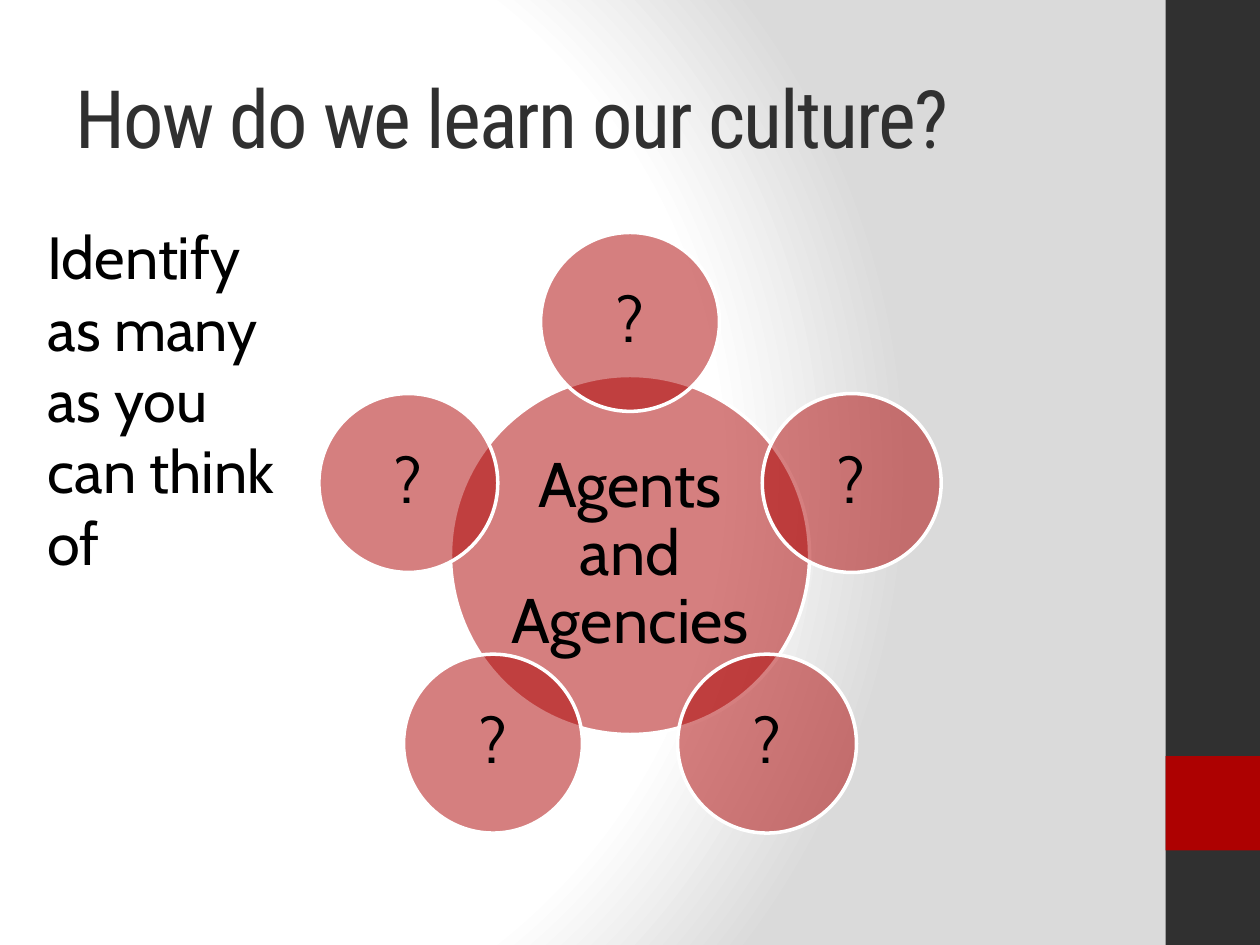
import math
import pptx
import pptx.util
import pptx.dml.color
import pptx.enum.shapes
import pptx.enum.text
import pptx.oxml
import pptx.oxml.ns
import lxml.etree

THEME = {
    "dark": "303030", "accent": "AD0101", "paper": "FFFFFF", "shade": "DADADA", "ink": "000000",
    "head": "Roboto Condensed", "body": "Cabin",
    "title_size": 46, "prompt_size": 34, "circle_size": 36, "outline": 2,
}

qn = pptx.oxml.ns.qn
rgb = pptx.dml.color.RGBColor.from_string
SHAPE = pptx.enum.shapes.MSO_SHAPE
ALIGN = pptx.enum.text.PP_ALIGN
ANCHOR = pptx.enum.text.MSO_ANCHOR

prs = pptx.Presentation()
prs.slide_width = pptx.util.Inches(10)
prs.slide_height = pptx.util.Inches(7.5)
U = prs.slide_width // 100
s = prs.slides.add_slide(prs.slide_layouts[6])


def add_shape(kind, x, y, w, h, color):
    sp = s.shapes.add_shape(kind, *(int(v * U) for v in (x, y, w, h)))
    sp.shadow.inherit = False
    sp.fill.solid()
    sp.fill.fore_color.rgb = rgb(color)
    sp.line.fill.background()
    return sp


def write(sp, text, frame, para, font, color):
    tf = sp.text_frame
    p = tf.paragraphs[0]
    r = p.add_run()
    r.text = text
    for obj, values in ((tf, {"word_wrap": True, **frame}), (p, para), (r.font, font)):
        for name, value in values.items():
            setattr(obj, name, value)
    r.font.color.rgb = rgb(color)
    return r


s.background.fill.gradient()
grad = s.element.find(".//" + qn("a:gradFill"))
for child in list(grad):
    grad.remove(child)
stops = lxml.etree.SubElement(grad, qn("a:gsLst"))
for pos, color in ((0, "paper"), (75, "paper"), (100, "shade")):
    stop = lxml.etree.SubElement(stops, qn("a:gs"), pos=str(pos * 1000))
    lxml.etree.SubElement(stop, qn("a:srgbClr"), val=THEME[color])
focus = lxml.etree.SubElement(grad, qn("a:path"), path="circle")
lxml.etree.SubElement(focus, qn("a:fillToRect"), l="20000", t="50000", r="100000", b="50000")

add_shape(SHAPE.RECTANGLE, 92.5, 0, 7.5, 75, THEME["dark"])
add_shape(SHAPE.RECTANGLE, 92.5, 60, 7.5, 7.5, THEME["accent"])

title = s.shapes.add_textbox(*(int(v * U) for v in (5, 3, 83.3, 12.5)))
r = write(title, "How do we learn our culture?", {"vertical_anchor": ANCHOR.MIDDLE}, {},
          {"size": pptx.util.Pt(THEME["title_size"]), "name": THEME["head"]}, THEME["dark"])
r.font._element.set("spc", "-100")

hub_x, hub_y, orbit = 50, 44.05, 18.5
circles = [("Agents and Agencies", hub_x, hub_y, 28.5)]
for i in range(5):
    angle = math.radians(72 * i)
    circles.append(("?", hub_x + orbit * math.sin(angle), hub_y - orbit * math.cos(angle), 14.2))

inset = pptx.util.Inches(0.05)
circle_frame = {"vertical_anchor": ANCHOR.MIDDLE, "margin_left": inset, "margin_right": inset,
                "margin_top": inset, "margin_bottom": inset}
circle_para = {"alignment": ALIGN.CENTER, "line_spacing": 0.9}
circle_font = {"size": pptx.util.Pt(THEME["circle_size"]), "name": THEME["body"]}
for text, x, y, d in circles:
    sp = add_shape(SHAPE.OVAL, x - d / 2, y - d / 2, d, d, THEME["accent"])
    fill_color = sp.element.spPr.find(qn("a:solidFill"))[0]
    lxml.etree.SubElement(fill_color, qn("a:alpha"), val="50000")
    sp.line.color.rgb = rgb(THEME["paper"])
    sp.line.width = pptx.util.Pt(THEME["outline"])
    write(sp, text, circle_frame, circle_para, circle_font, THEME["ink"])

prompt = s.shapes.add_textbox(*(int(v * U) for v in (2.8, 17, 22, 29.6)))
write(prompt, "Identify as many as you can think of",
      {"auto_size": pptx.enum.text.MSO_AUTO_SIZE.SHAPE_TO_FIT_TEXT}, {},
      {"size": pptx.util.Pt(THEME["prompt_size"]), "name": THEME["body"]}, THEME["ink"])

prs.save("out.pptx")
